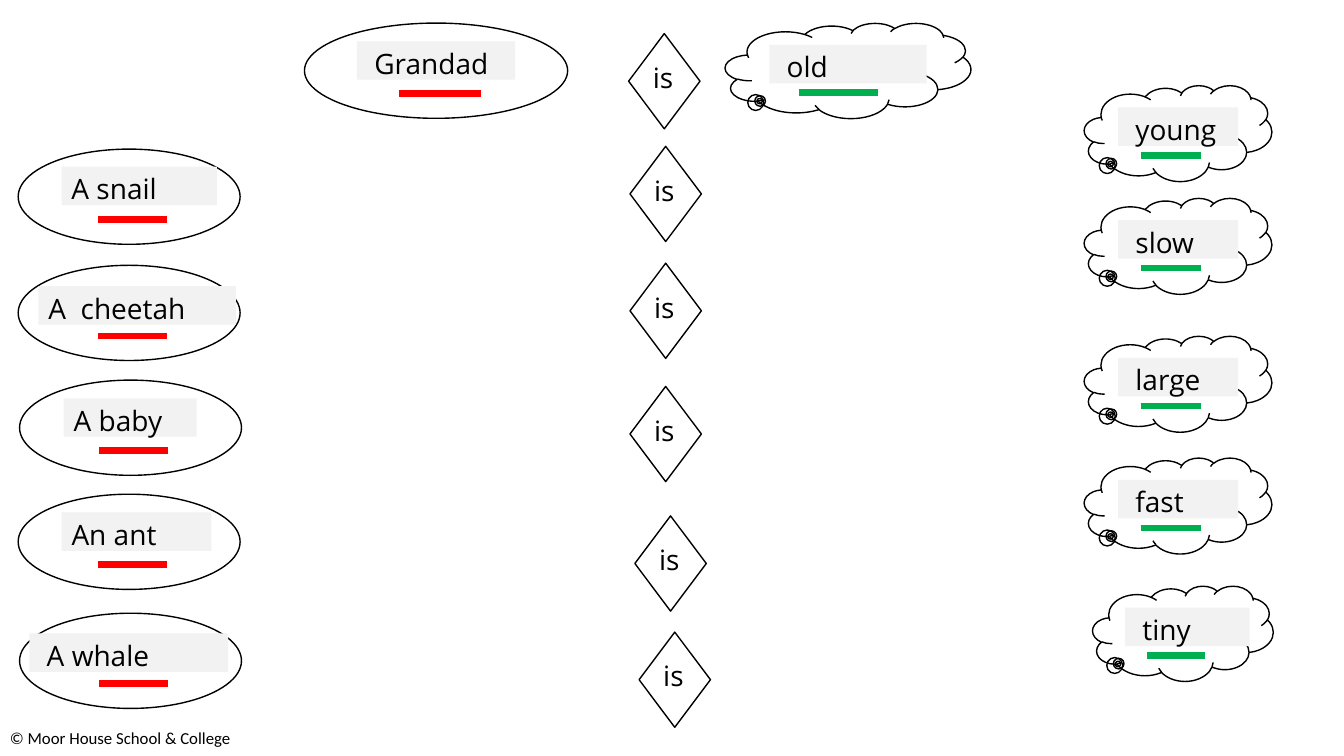
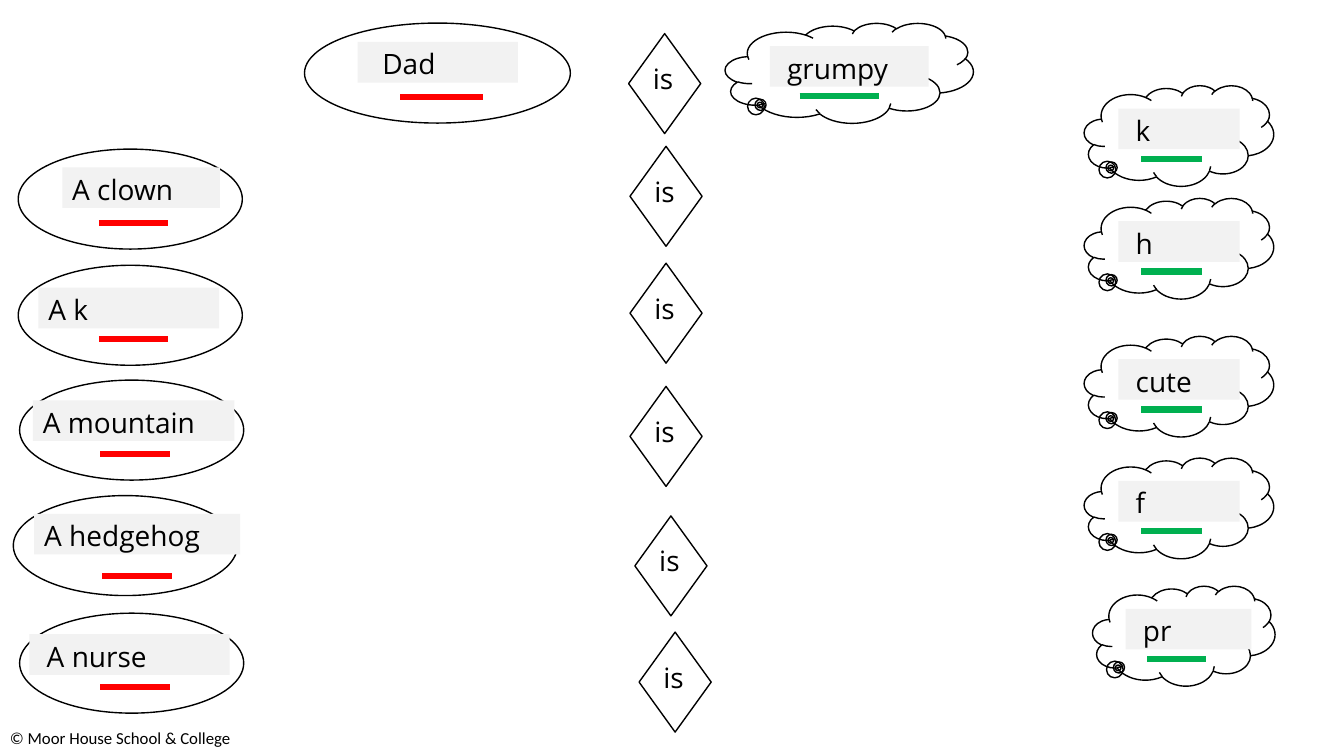
from dataclasses import dataclass

from lxml.etree import SubElement
from pptx import Presentation
from pptx.dml.color import RGBColor
from pptx.enum.shapes import MSO_CONNECTOR, MSO_SHAPE
from pptx.enum.text import MSO_ANCHOR, PP_ALIGN
from pptx.oxml.ns import qn
from pptx.util import Pt


@dataclass(frozen=True)
class Theme:
    ink: RGBColor = RGBColor(0, 0, 0)
    label: RGBColor = RGBColor(0xF2, 0xF2, 0xF2)
    noun: RGBColor = RGBColor(0xFF, 0, 0)
    trait: RGBColor = RGBColor(0, 0xB0, 0x50)
    font: str = "Open Sans"
    size: float = 20
    foot_font: str = "Calibri"
    foot_size: float = 12
    edge: float = 1
    bar: float = 4.5
    inset: float = 7.2
    space: float = 5.2


THEME = Theme()

# Places shared by both slides: left, top, width, height
OVALS = [(217.5, 16.5, 188, 68)] + [
    (x, y, 158.5, 68)
    for x, y in [(13, 106.5), (13, 189.5), (14, 271.5), (13, 353), (14, 438)]
]
GEMS = [
    (x, y, 51, 68)
    for x, y in [(449, 24), (450, 104.5), (450, 188), (450, 276),
                 (453.5, 368.5), (456.5, 451.5)]
]
CLOUDS = [(518, 16.5, 175.5, 68)] + [
    (774.5, y, 134, 68.5) for y in (61, 141.5, 240, 327)
] + [(780.5, 418.5, 129, 68)]


@dataclass(frozen=True)
class Noun:
    text: str
    left: float  # label offset in the oval
    top: float
    width: float
    indent: float = 0
    move: tuple = (0, 0)  # shift of the oval
    bar: tuple = (0, 0)  # shift of the bar in the oval


@dataclass(frozen=True)
class Sheet:
    nouns: list
    traits: list
    grow: tuple  # width and height factors
    high: float  # label height


SHEETS = [
    Sheet(
        [Noun("Grandad", 37.5, 13, 113, THEME.space),
         Noun("A snail", 31, 12.5, 111),
         Noun("A  cheetah", 14.5, 15, 141),
         Noun("A baby", 31.5, 13, 95),
         Noun("An ant", 31, 13, 107),
         Noun("A whale", 7, 14.5, 142, THEME.space)],
        ["old", "young", "slow", "large", "fast", "tiny"],
        (1, 1), 27.5),
    Sheet(
        [Noun("Dad", 38, 13.5, 114.5, 2 * THEME.space),
         Noun("A clown", 31.5, 13, 112.5),
         Noun("A k", 14.5, 16, 129),
         Noun("A mountain", 9.5, 14.5, 144),
         Noun("A hedgehog", 15, 13, 147, move=(-3.5, 1), bar=(6, 4.5)),
         Noun("A nurse", 7, 15, 143, THEME.space)],
        ["grumpy", "k", "h", "cute", "f", "pr"],
        (1.01, 1.05), 29),
]


def points(box):
    return [Pt(n) for n in box]


def write(shape, text, font, size, indent=0):
    """Put one left-aligned run at the top of a shape."""
    frame = shape.text_frame
    frame.word_wrap = True
    frame.vertical_anchor = MSO_ANCHOR.TOP
    frame.margin_left = Pt(THEME.inset + indent)
    para = frame.paragraphs[0]
    para.alignment = PP_ALIGN.LEFT
    run = para.add_run()
    run.text = text
    run.font.name = font
    run.font.size = Pt(size)
    run.font.color.rgb = THEME.ink


def outline(shapes, kind, box):
    shape = shapes.add_shape(kind, *points(box))
    shape.shadow.inherit = False
    shape.fill.background()
    shape.line.color.rgb = THEME.ink
    shape.line.width = Pt(THEME.edge)
    return shape


def label(shapes, text, box, indent):
    shape = shapes.add_shape(MSO_SHAPE.RECTANGLE, *points(box))
    shape.shadow.inherit = False
    shape.fill.solid()
    shape.fill.fore_color.rgb = THEME.label
    shape.line.fill.background()
    write(shape, text, THEME.font, THEME.size, indent)


def rule(shapes, start, end, y, color):
    bar = shapes.add_connector(MSO_CONNECTOR.STRAIGHT, *points((start, y, end, y)))
    bar.line.color.rgb = color
    bar.line.width = Pt(THEME.bar)
    SubElement(bar.element.spPr, qn("a:effectLst"))


def oval(slide, box, noun, high):
    """Noun in an oval with a red bar."""
    x, y, w, h = box
    shapes = slide.shapes.add_group_shape().shapes
    outline(shapes, MSO_SHAPE.OVAL, box)
    label(shapes, noun.text, (x + noun.left, y + noun.top, noun.width, high),
          noun.indent)
    dx, dy = noun.bar
    rule(shapes, x + 0.36 * w + dx, x + 0.67 * w + dx, y + 0.74 * h + dy,
         THEME.noun)


def gem(slide, box, high):
    """Diamond with the verb."""
    x, y, w, h = box
    shapes = slide.shapes.add_group_shape().shapes
    outline(shapes, MSO_SHAPE.DIAMOND, box)
    verb = shapes.add_textbox(*points((x + 0.2 * w, y + 0.23 * h, 41, high)))
    write(verb, "is", THEME.font, THEME.size)


def cloud(slide, box, text, high, share):
    """Adjective in a cloud with a green bar."""
    x, y, w, h = box
    shapes = slide.shapes.add_group_shape().shapes
    shape = outline(shapes, MSO_SHAPE.CLOUD_CALLOUT, box)
    shape.adjustments[0] = -0.36
    shape.adjustments[1] = 0.32
    label(shapes, text, (x + 0.18 * w, y + 0.23 * h, share * w, high),
          THEME.space)
    rule(shapes, x + 0.3 * w, x + 0.62 * w, y + 0.73 * h, THEME.trait)


def footer(slide):
    """Move the copyright line to the layout, so every slide shows it."""
    box = slide.shapes.add_textbox(*points((0, 516, 307.5, 22)))
    write(box, "© Moor House School & College", THEME.foot_font, THEME.foot_size)
    slide.slide_layout.shapes.element.append(box.element)


def scale(box, grow):
    x, y, w, h = box
    return x, y, w * grow[0], h * grow[1]


def build(slide, sheet):
    # Nouns
    for box, noun in zip(OVALS, sheet.nouns):
        x, y, w, h = scale(box, sheet.grow)
        dx, dy = noun.move
        oval(slide, (x + dx, y + dy, w, h), noun, sheet.high)
    # Verbs
    for box in GEMS:
        gem(slide, scale(box, sheet.grow), sheet.high)
    # Adjectives; the last label is wider
    for box, text in zip(CLOUDS, sheet.traits):
        share = 0.69 if box == CLOUDS[-1] else 0.64
        cloud(slide, scale(box, sheet.grow), text, sheet.high, share)


def main():
    deck = Presentation()
    deck.slide_width, deck.slide_height = Pt(960), Pt(540)
    blank = deck.slide_layouts[6]
    slides = [deck.slides.add_slide(blank) for _ in SHEETS]
    footer(slides[0])
    for slide, sheet in zip(slides, SHEETS):
        build(slide, sheet)
    deck.save("out.pptx")


if __name__ == "__main__":
    main()
